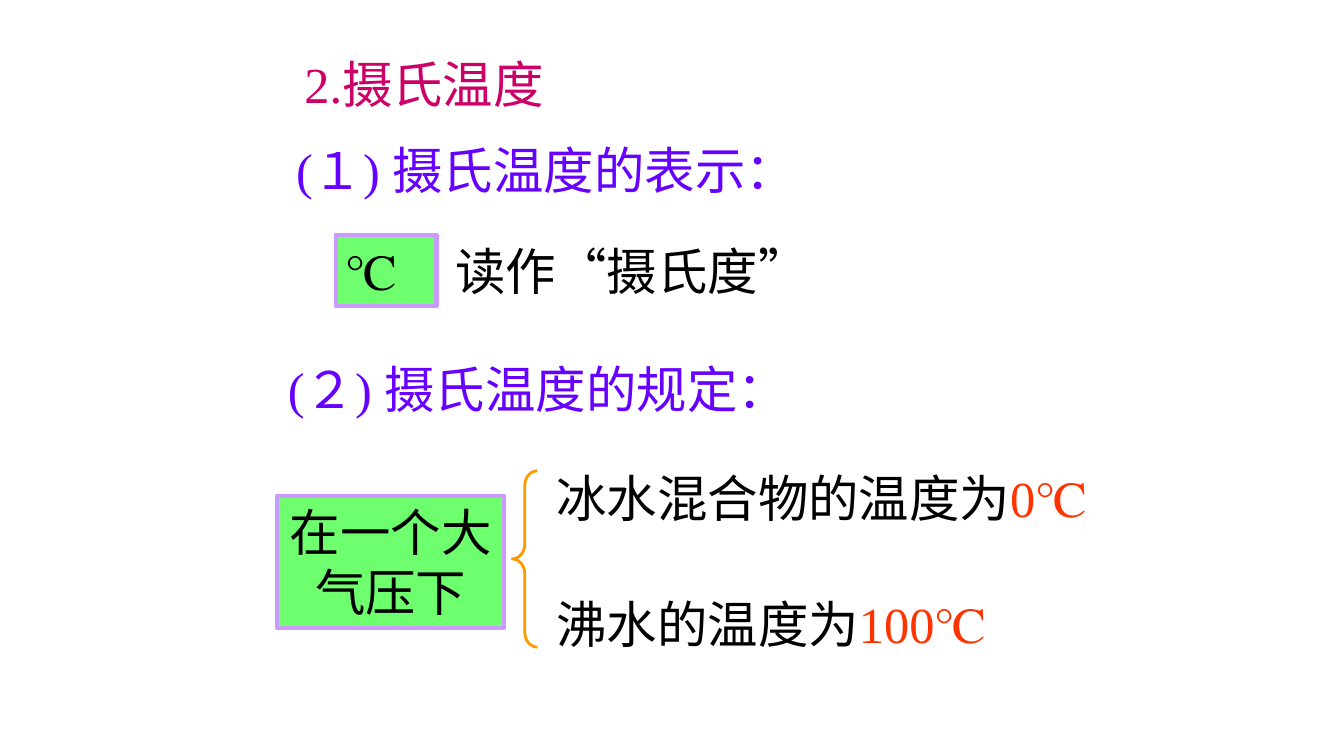
from lxml import etree
from pptx import Presentation
from pptx.dml.color import RGBColor
from pptx.enum import shapes, text
from pptx.oxml import ns
from pptx.util import Inches, Pt

BLACK = RGBColor(0x00, 0x00, 0x00)
CRIMSON = RGBColor(0xCC, 0x00, 0x66)
VIOLET = RGBColor(0x66, 0x00, 0xFF)
RED = RGBColor(0xFF, 0x33, 0x00)
GREEN = RGBColor(0x00, 0xFF, 0x00)
LILAC = RGBColor(0xCC, 0x99, 0xFF)
ORANGE = RGBColor(0xFF, 0x99, 0x00)
LEFT, CENTER = text.PP_ALIGN.LEFT, text.PP_ALIGN.CENTER
LINE_HEIGHT = 0.71


def write(frame, parts, align=LEFT, spacing=None):
    """Fill a text frame with one paragraph of (wording, colour) parts."""
    frame.word_wrap = True
    frame.auto_size = text.MSO_AUTO_SIZE.SHAPE_TO_FIT_TEXT
    frame.vertical_anchor = text.MSO_ANCHOR.TOP
    paragraph = frame.paragraphs[0]
    paragraph.alignment = align
    paragraph.line_spacing = spacing
    paragraph.font.name = "Times New Roman"
    paragraph.font.size = Pt(36)
    for wording, colour in parts:
        run = paragraph.add_run()
        run.text = wording
        run.font.color.rgb = colour


def add_line(slide, left, top, width, *parts, height=LINE_HEIGHT, **style):
    """Add a line of plain text."""
    line = slide.shapes.add_textbox(
        Inches(left), Inches(top), Inches(width), Inches(height))
    write(line.text_frame, parts, **style)


def add_outlined(slide, preset, left, top, width, height, colour, weight):
    """Add a preset shape with a coloured outline and no shadow."""
    outlined = slide.shapes.add_shape(
        preset, Inches(left), Inches(top), Inches(width), Inches(height))
    outlined.shadow.inherit = False
    outlined.fill.background()
    outlined.line.color.rgb = colour
    outlined.line.width = Pt(weight)
    return outlined


def add_key_box(slide, left, top, width, height, wording, align=LEFT):
    """Add a translucent green box holding a key term."""
    box = add_outlined(slide, shapes.MSO_SHAPE.RECTANGLE,
                       left, top, width, height, LILAC, 3)
    box.fill.solid()
    box.fill.fore_color.rgb = GREEN
    tint = box.fill._xPr.find(ns.qn("a:solidFill"))[0]
    etree.SubElement(tint, ns.qn("a:alpha"), val="57000")
    write(box.text_frame, [(wording, BLACK)], align)


def main():
    """Build the slide on the Celsius scale."""
    deck = Presentation()
    deck.slide_width, deck.slide_height = Inches(13.33), Inches(7.5)
    slide = deck.slides.add_slide(deck.slide_layouts[6])

    add_line(slide, 2.92, 0.42, 4, ("2.摄氏温度", CRIMSON),
             height=0.77, spacing=1.1)
    add_line(slide, 2.5, 1.33, 5.83, ("(１) 摄氏温度的表示：", VIOLET), align=CENTER)
    add_key_box(slide, 3.33, 2.33, 1, LINE_HEIGHT, "℃")
    add_line(slide, 4.42, 2.33, 3.92, ("读作“摄氏度”", BLACK))

    add_line(slide, 2.42, 3.5, 5.83, ("(２) 摄氏温度的规定：", VIOLET), align=CENTER)
    add_key_box(slide, 2.75, 4.92, 2.25, 1.31, "在一个大气压下", CENTER)
    brace = add_outlined(slide, shapes.MSO_SHAPE.LEFT_BRACE,
                         5.08, 4.67, 0.25, 1.75, ORANGE, 2)
    brace.adjustments[0] = 0.58
    add_line(slide, 5.42, 4.58, 5.83, ("冰水混合物的温度为", BLACK), ("0℃", RED))
    add_line(slide, 5.42, 5.83, 4.67, ("沸水的温度为", BLACK), ("100℃", RED))

    deck.save("out.pptx")


if __name__ == "__main__":
    main()
